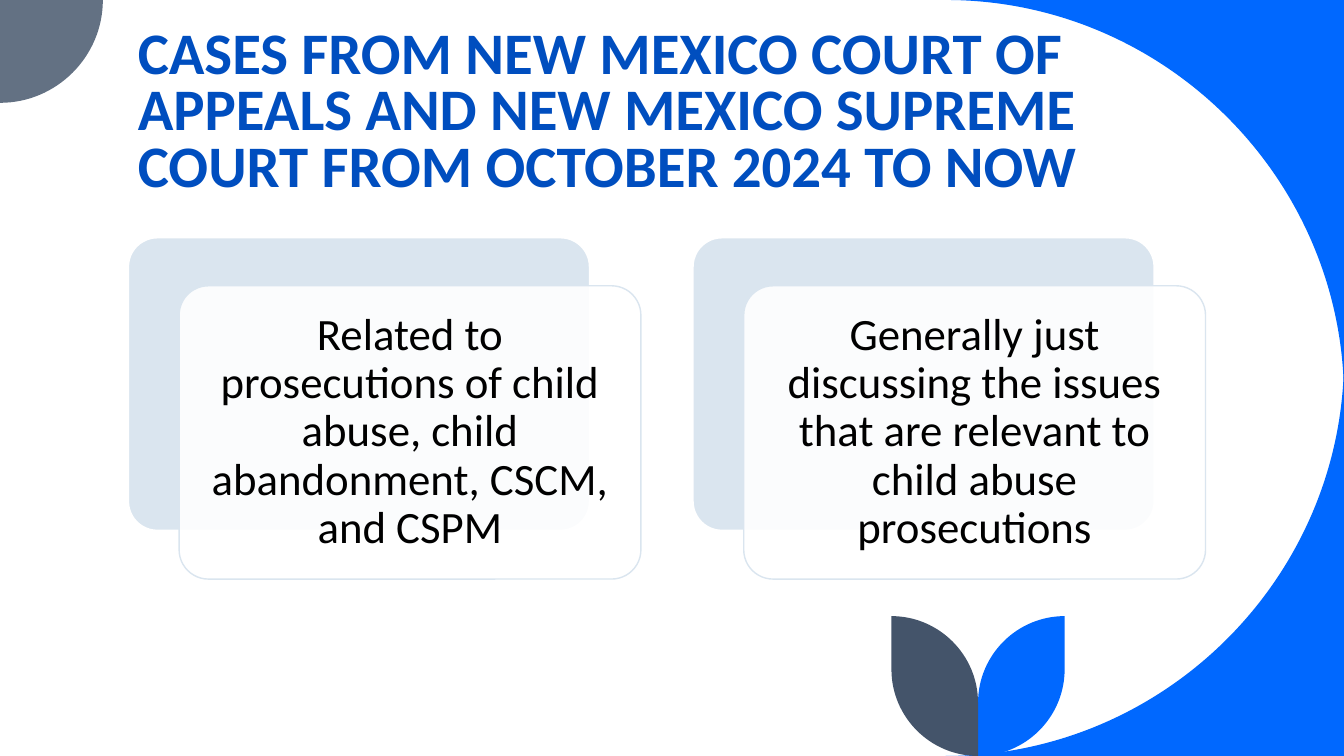
from lxml import etree
from pptx import Presentation, util as u
from pptx.dml.color import RGBColor
from pptx.enum import shapes, text
from pptx.oxml import ns

WIDTH, HEIGHT = u.Inches(13.33), u.Inches(7.5)
BLUE, TITLE_BLUE, SLATE, GREY = "0068FF", "004EBF", "44546A", "637183"
PALE, WHITE, BLACK = "DAE5EF", "FFFFFF", "000000"
ROUNDNESS = 0.55  # control-point share that turns a corner into a quarter circle
TITLE = ("CASES FROM NEW MEXICO COURT OF APPEALS AND NEW MEXICO SUPREME "
         "COURT FROM OCTOBER 2024 TO NOW")
CARDS = [
    "Related to prosecutions of child abuse, child abandonment, CSCM, and CSPM",
    "Generally just discussing the issues that are relevant to child abuse prosecutions",
]


def across(percent):
    return round(WIDTH * percent / 100)


def down(percent):
    return round(HEIGHT * percent / 100)


def color(target, code):
    """Set a fill or a line fill to a solid colour."""
    target.solid()
    target.fore_color.rgb = RGBColor.from_string(code)


def apply(target, values):
    for name, value in values.items():
        setattr(target, name, value)


def write(shape, words, frame_format, para_format, font_format, code):
    frame = shape.text_frame
    apply(frame, {"word_wrap": True, "auto_size": text.MSO_AUTO_SIZE.NONE, **frame_format})
    para = frame.paragraphs[0]
    apply(para, para_format)
    span = para.add_run()
    span.text = words
    apply(span.font, {"name": "Calibri", **font_format})
    color(span.font.fill, code)


# Curved decoration
def toward(point, corner):
    return tuple(round(p + ROUNDNESS * (c - p)) for p, c in zip(point, corner))


def quarter(start, corner, end):
    """Quarter circle from start to end, bulging toward the corner."""
    return [toward(start, corner), toward(end, corner), end]


def add_outline(page, start, segments, fill):
    """Each segment is one point (a line) or three points (a curve)."""
    builder = page.shapes.build_freeform(*start, scale=1.0)
    builder.add_line_segments([point for segment in segments for point in segment])
    shape = builder.convert_to_shape()
    steps = iter(list(shape.element.iter(ns.qn("a:lnTo"))))
    for segment in segments:
        first, *others = [next(steps) for _ in segment]
        if others:
            first.tag = ns.qn("a:cubicBezTo")
            for step in others:
                first.append(step[0])
                step.getparent().remove(step)
    shape.shadow.inherit = False
    color(shape.fill, fill)
    shape.line.fill.background()


def add_swoosh(page, edge):
    """Corner at the top (edge 0) or bottom (edge HEIGHT) beside the big circle."""
    radius = down(52.67)
    start, corner = (WIDTH - radius, edge), (WIDTH, edge)
    side = (WIDTH, abs(edge - radius))
    add_outline(page, start, [quarter(start, corner, side), [corner]], fill=BLUE)


def add_leaf(page, side, fill):
    """Leaf on the right (side 1) or left (side -1) of the stem."""
    stem, radius, top = across(72.77), down(11.45), down(81.5)
    outer = stem + side * radius
    tip, foot = (outer, top), (stem, HEIGHT)
    shoulder, heart = (outer, HEIGHT - radius), (stem, top + radius)
    add_outline(page, tip, [[shoulder], quarter(shoulder, (outer, HEIGHT), foot),
                            [heart], quarter(heart, (stem, top), tip)], fill)


def add_decoration(page):
    for edge in (0, HEIGHT):
        add_swoosh(page, edge)
    radius = down(13.6)
    start = (radius, 0)
    add_outline(page, start, [quarter(start, (radius, radius), (0, radius)), [(0, 0)]], GREY)
    add_leaf(page, 1, BLUE)
    add_leaf(page, -1, SLATE)


# Title
def add_title(page):
    title = page.shapes.title
    title.element.getparent().append(title.element)  # bring to the front
    apply(title, {"left": across(9.5), "top": down(1.47),
                  "width": across(80.2), "height": down(25.47)})
    write(title, TITLE, {"vertical_anchor": text.MSO_ANCHOR.BOTTOM},
          {"alignment": text.PP_ALIGN.LEFT, "line_spacing": 0.8},
          {"size": u.Pt(42), "bold": True}, TITLE_BLUE)


# Layered cards
def add_panel(page, left, top, fill, line, line_width):
    panel = page.shapes.add_shape(shapes.MSO_SHAPE.ROUNDED_RECTANGLE,
                                  left, top, across(34.36), down(38.8))
    panel.adjustments[0] = 0.1
    panel.shadow.inherit = False
    color(panel.fill, fill)
    color(panel.line.fill, line)
    panel.line.width = u.Pt(line_width)
    return panel


def set_opacity(shape, percent):
    tone = shape.element.spPr.find(ns.qn("a:solidFill"))[0]
    etree.SubElement(tone, ns.qn("a:alpha")).set("val", str(percent * 1000))


def add_card(page, column, words):
    left, top = across(9.53 + 42.01 * column), down(31.4)
    add_panel(page, left, top, PALE, WHITE, 1.5)
    front = add_panel(page, left + across(3.8), top + down(6.4), WHITE, PALE, 1)
    set_opacity(front, 90)
    margins = {f"margin_{side}": u.Inches(0.13) for side in ("left", "right", "top", "bottom")}
    write(front, words, {"vertical_anchor": text.MSO_ANCHOR.MIDDLE, **margins},
          {"alignment": text.PP_ALIGN.CENTER, "line_spacing": 0.9},
          {"size": u.Pt(32)}, BLACK)


def main():
    deck = Presentation()
    deck.slide_width, deck.slide_height = WIDTH, HEIGHT
    page = deck.slides.add_slide(deck.slide_layouts.get_by_name("Title Only"))
    color(page.background.fill, WHITE)
    add_decoration(page)
    add_title(page)
    for column, words in enumerate(CARDS):
        add_card(page, column, words)
    deck.save("out.pptx")


if __name__ == "__main__":
    main()
